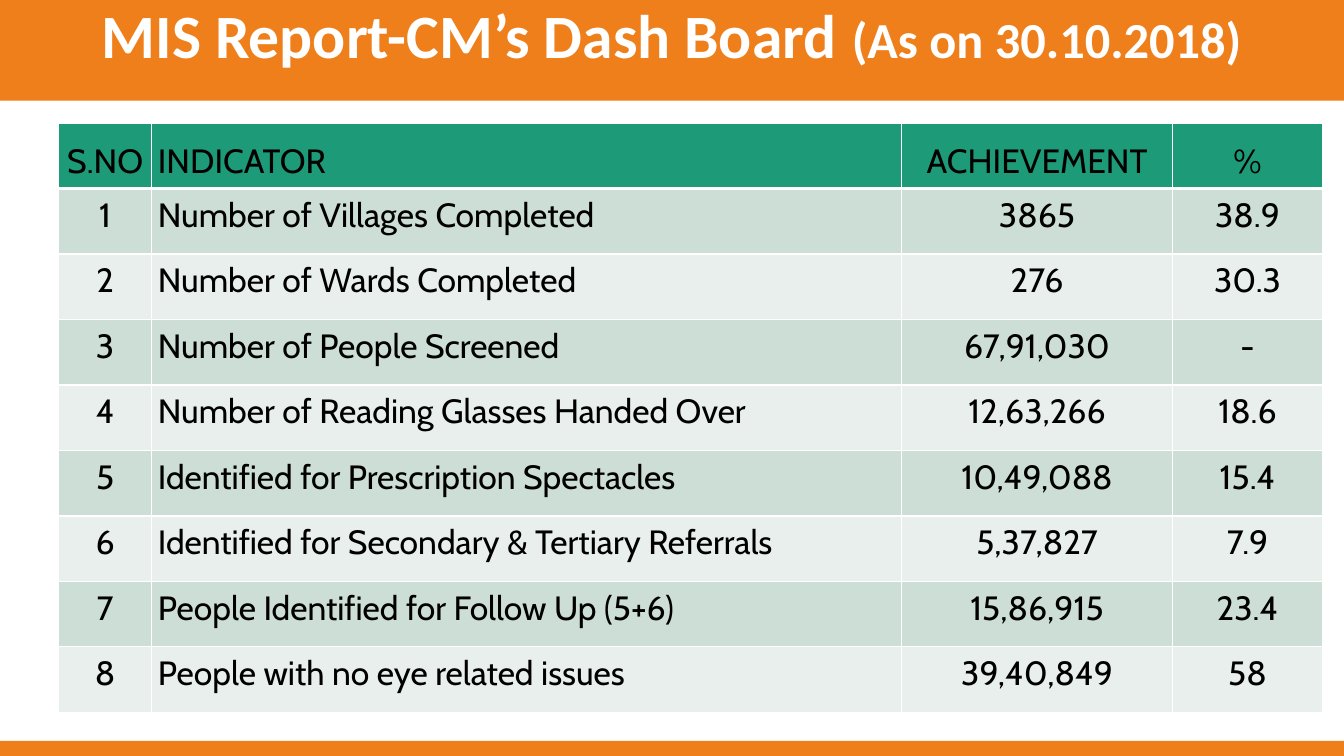
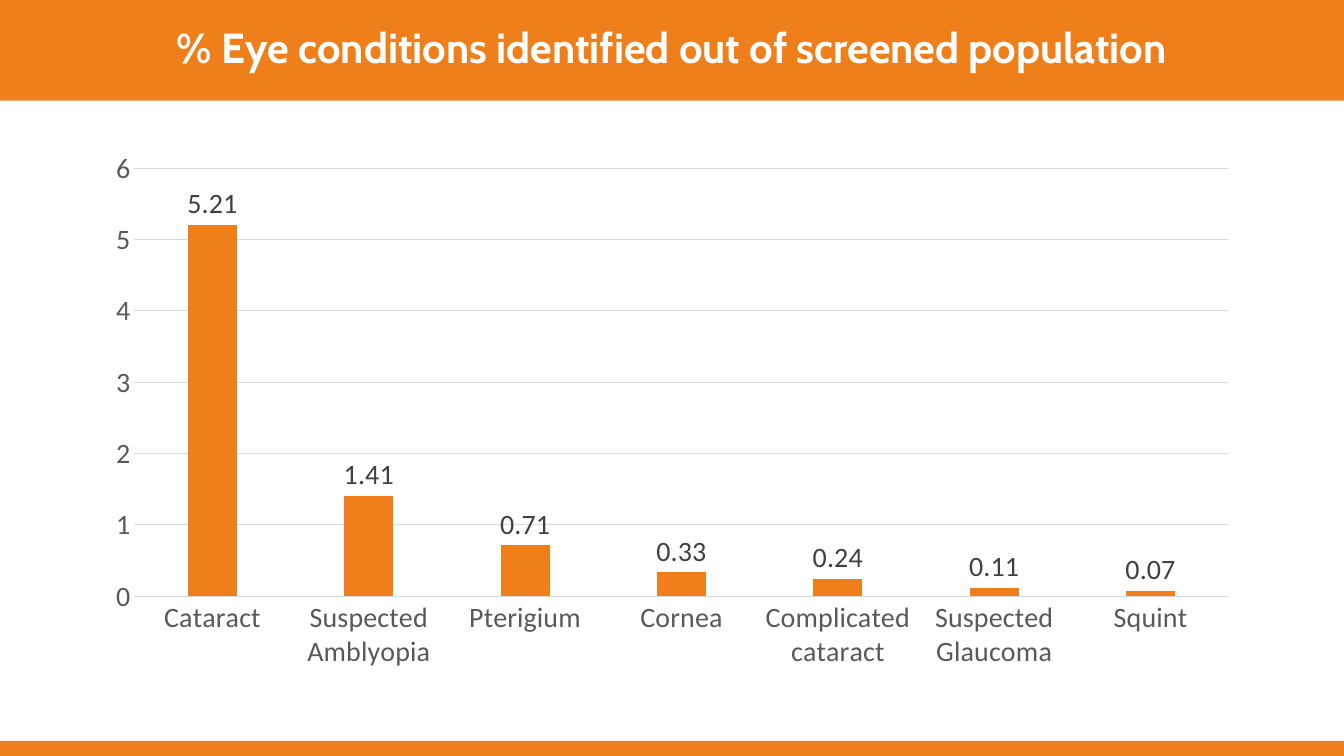
from lxml import etree
from pptx import Presentation
from pptx.chart.data import CategoryChartData
from pptx.dml.color import RGBColor
from pptx.enum.chart import XL_CHART_TYPE as ChartType, XL_LABEL_POSITION as LabelPos, XL_TICK_MARK as Tick
from pptx.enum.shapes import MSO_SHAPE as Shape
from pptx.enum.text import MSO_ANCHOR as Anchor, PP_ALIGN as Align
from pptx.oxml.ns import qn
from pptx.util import Cm, Pt

ORANGE = RGBColor(0xEF, 0x7F, 0x1A)
GREEN = RGBColor(0x1D, 0x9A, 0x78)
GREEN_MID = RGBColor(0xCD, 0xDE, 0xD6)
GREEN_PALE = RGBColor(0xE8, 0xEF, 0xEC)
WHITE = RGBColor(0xFF, 0xFF, 0xFF)
BLACK = RGBColor(0, 0, 0)
AXIS_GREY = RGBColor(0x59, 0x59, 0x59)
LABEL_GREY = RGBColor(0x40, 0x40, 0x40)
LINE_GREY = RGBColor(0xD9, 0xD9, 0xD9)

WIDTH, HEIGHT = Cm(33.87), Cm(19.05)
TITLE_H, FOOTER_H = Cm(2.54), Cm(0.38)

INDICATORS = [
    ("S.NO", "INDICATOR", "ACHIEVEMENT", "%"),
    ("1", "Number of Villages Completed", "3865", "38.9"),
    ("2", "Number of Wards Completed", "276", "30.3"),
    ("3", "Number of People Screened", "67,91,030", "-"),
    ("4", "Number of Reading Glasses Handed Over", "12,63,266", "18.6"),
    ("5", "Identified for Prescription Spectacles", "10,49,088", "15.4"),
    ("6", "Identified for Secondary & Tertiary Referrals", "5,37,827", "7.9"),
    ("7", "People Identified for Follow Up (5+6)", "15,86,915", "23.4"),
    ("8", "People with no eye related issues", "39,40,849", "58"),
]
CONDITIONS = {
    "Cataract": 5.21,
    "Suspected Amblyopia": 1.41,
    "Pterigium": 0.71,
    "Cornea": 0.33,
    "Complicated cataract": 0.24,
    "Suspected Glaucoma": 0.11,
    "Squint": 0.07,
}


def style_font(font, name, size, color, bold=False):
    font.name, font.size, font.bold = name, Pt(size), bold
    font.color.rgb = color


def set_borders(cell, color, **widths):
    """Draw cell borders; widths are points keyed by L, R, T and B, in that order."""
    tc_pr = cell._tc.get_or_add_tcPr()
    for side, width in widths.items():
        ln = etree.SubElement(tc_pr, qn(f"a:ln{side}"), w=str(Pt(width)))
        fill = etree.SubElement(ln, qn("a:solidFill"))
        etree.SubElement(fill, qn("a:srgbClr"), val=str(color))


class Deck:
    """The presentation, its shared style and the current slide."""

    def __init__(self):
        self.prs = Presentation()
        self.prs.slide_width, self.prs.slide_height = WIDTH, HEIGHT
        self.s = None

    def band(self, top, height):
        sp = self.s.shapes.add_shape(Shape.RECTANGLE, 0, top, WIDTH, height)
        sp.shadow.inherit = False
        sp.fill.solid()
        sp.fill.fore_color.rgb = ORANGE
        sp.line.fill.background()
        return sp

    def slide(self, title_runs, font, anchor):
        """Start a slide; title_runs holds (text, size) pairs."""
        self.s = self.prs.slides.add_slide(self.prs.slide_layouts[6])
        self.band(HEIGHT - FOOTER_H, FOOTER_H)
        tf = self.band(0, TITLE_H).text_frame
        tf.word_wrap = True
        tf.vertical_anchor = anchor
        p = tf.paragraphs[0]
        p.alignment = Align.CENTER
        p.line_spacing = 0.9
        for text, size in title_runs:
            r = p.add_run()
            r.text = text
            style_font(r.font, font, size, WHITE, bold=True)

    def table(self, rows, left, top, col_widths, row_height, left_col):
        """Add a table whose cells are centred except in column left_col."""
        frame = self.s.shapes.add_table(len(rows), len(col_widths), left, top,
                                        sum(col_widths), row_height * len(rows))
        tbl = frame.table
        tbl.first_row = tbl.horz_banding = False
        for column, width in zip(tbl.columns, col_widths):
            column.width = width
        for i, texts in enumerate(rows):
            tbl.rows[i].height = row_height
            for j, text in enumerate(texts):
                align = Align.LEFT if j == left_col else Align.CENTER
                self.cell(tbl.cell(i, j), text, i, align)

    def cell(self, cell, text, row, align):
        set_borders(cell, WHITE, L=1, R=1, T=3 if row == 1 else 1, B=3 if row == 0 else 1)
        cell.fill.solid()
        if row == 0:
            cell.fill.fore_color.rgb = GREEN
        else:
            cell.fill.fore_color.rgb = GREEN_MID if row % 2 else GREEN_PALE
        cell.vertical_anchor = Anchor.BOTTOM if row == 0 else Anchor.TOP
        cell.margin_left = cell.margin_right = cell.margin_top = cell.margin_bottom = Cm(0.16)
        cell.text_frame.text = text
        p = cell.text_frame.paragraphs[0]
        p.alignment = align
        style_font(p.runs[0].font, "Cabin", 24, BLACK)

    def column_chart(self, values, left, top, width, height):
        data = CategoryChartData()
        data.categories = list(values)
        data.add_series("Series 1", list(values.values()))
        chart = self.s.shapes.add_chart(ChartType.COLUMN_CLUSTERED, left, top,
                                        width, height, data).chart
        chart.has_legend = chart.has_title = False
        style_font(chart.font, "Calibri", 10, BLACK)
        for axis in (chart.category_axis, chart.value_axis):
            axis.major_tick_mark = axis.minor_tick_mark = Tick.NONE
            style_font(axis.tick_labels.font, "Calibri", 20, AXIS_GREY)
        grid = chart.value_axis.major_gridlines.format.line
        for line in (chart.category_axis.format.line, grid):
            line.color.rgb = LINE_GREY
            line.width = Pt(0.75)
        chart.value_axis.format.line.fill.background()
        chart.value_axis.minimum_scale, chart.value_axis.maximum_scale = 0, 6
        chart.value_axis.major_unit = 1

        plot = chart.plots[0]
        plot.vary_by_categories = False
        plot.gap_width, plot.overlap = 219, -27
        series = plot.series[0]
        series.format.fill.solid()
        series.format.fill.fore_color.rgb = ORANGE
        labels = series.data_labels
        labels.show_value = True
        labels.position = LabelPos.OUTSIDE_END
        style_font(labels.font, "Calibri", 20, LABEL_GREY)


def main():
    deck = Deck()
    deck.slide([("MIS Report-CM’s Dash Board ", 44), ("(As on 30.10.2018)", 36)],
               "Calibri", Anchor.TOP)
    deck.table(INDICATORS, Cm(1.48), Cm(3.1),
               [Cm(2.34), Cm(18.9), Cm(6.83), Cm(3.78)], Cm(1.65), left_col=1)

    deck.slide([("% Eye conditions identified out of screened population", 30)],
               "Cabin", Anchor.MIDDLE)
    deck.column_chart(CONDITIONS, Cm(2.34), Cm(3.53), Cm(29.21), Cm(13.61))
    deck.prs.save("out.pptx")


if __name__ == "__main__":
    main()
